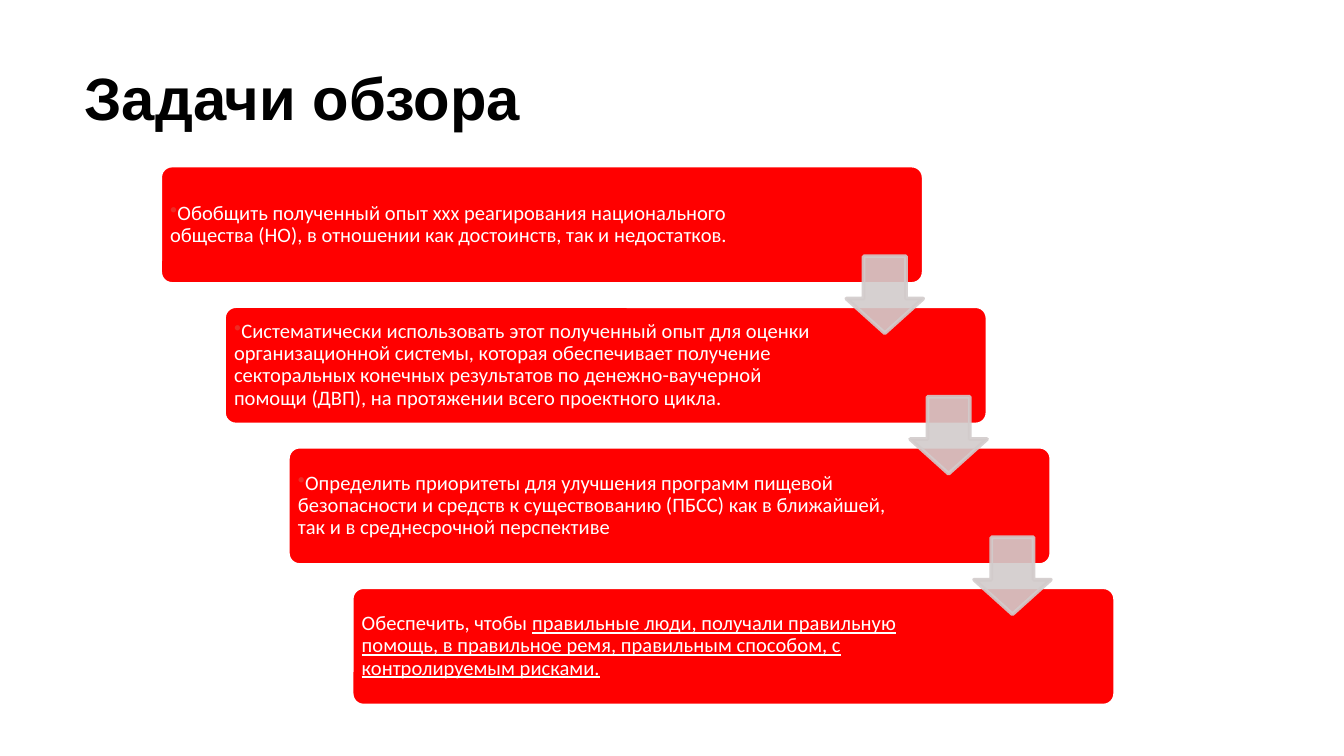
import pptx
import pptx.util
import pptx.dml.color
import pptx.enum.shapes
import pptx.enum.text
import pptx.oxml.ns
import lxml.etree

Pt = pptx.util.Pt
qn = pptx.oxml.ns.qn
SHAPE = pptx.enum.shapes.MSO_SHAPE
ANCHOR = pptx.enum.text.MSO_ANCHOR

COLORS = {
    "title": "000000",
    "box": "FF0000",
    "text": "FFFFFF",
    "bullet": "EE2A24",
    "arrow": "D2CBCB",
}

TASKS = [
    [("Обобщить полученный опыт xxx реагирования национального общества (НО), "
      "в отношении как достоинств, так и недостатков.", False)],
    [("Систематически использовать этот полученный опыт для оценки организационной "
      "системы, которая обеспечивает получение секторальных конечных результатов "
      "по денежно-ваучерной помощи (ДВП), на протяжении всего проектного цикла.", False)],
    [("Определить приоритеты для улучшения программ пищевой безопасности и средств "
      "к существованию (ПБСС) как в ближайшей, так и в среднесрочной перспективе", False)],
    [("Обеспечить, чтобы ", False),
     ("правильные люди, получали правильную помощь, в правильное ремя, "
      "правильным способом, с контролируемым рисками.", True)],
]


class Deck:
    def __init__(self, s):
        self.s = s

    def color(self, name):
        return pptx.dml.color.RGBColor.from_string(COLORS[name])

    def shape(self, kind, x, y, w, h, fill, line, adjustments, alpha=None):
        sp = self.s.shapes.add_shape(kind, Pt(x), Pt(y), Pt(w), Pt(h))
        sp.shadow.inherit = False
        for i, value in enumerate(adjustments):
            sp.adjustments[i] = value
        sp.fill.solid()
        sp.fill.fore_color.rgb = self.color(fill)
        sp.line.color.rgb = self.color(line)
        sp.line.width = Pt(2)
        if alpha is not None:
            for clr in sp._element.spPr.iter(qn("a:srgbClr")):
                lxml.etree.SubElement(clr, qn("a:alpha")).set("val", str(alpha * 1000))

    def box(self, x, y, w, h):
        self.shape(SHAPE.ROUNDED_RECTANGLE, x, y, w, h, "box", "text", [0.1])

    def arrow(self, x, y, size):
        self.shape(SHAPE.DOWN_ARROW, x, y, size, size, "arrow", "arrow", [0.55, 0.45], 90)

    def frame(self, x, y, w, h):
        tf = self.s.shapes.add_textbox(Pt(x), Pt(y), Pt(w), Pt(h)).text_frame
        tf.word_wrap = True
        return tf

    def run(self, p, text, font, size, color, bold=False, underline=False):
        r = p.add_run()
        r.text = text
        r.font.name = font
        r.font.size = Pt(size)
        r.font.bold = bold
        r.font.underline = underline
        r.font.color.rgb = self.color(color)

    def title(self, text, x, y, w, h):
        tf = self.frame(x, y, w, h)
        self.run(tf.paragraphs[0], text, "Arial", 32, "title", bold=True)

    def task(self, runs, x, y, w, h, bullet):
        tf = self.frame(x, y, w, h)
        tf.vertical_anchor = ANCHOR.MIDDLE
        tf.margin_left = tf.margin_right = tf.margin_top = tf.margin_bottom = Pt(3.6)
        p = tf.paragraphs[0]
        p.line_spacing = 0.9
        if bullet:
            self.bullet(p)
        for text, underline in runs:
            self.run(p, text, "Calibri", 11, "text", underline=underline)

    def bullet(self, p):
        pPr = p._p.get_or_add_pPr()
        pPr.set("marL", "0")
        pPr.set("indent", str(-Pt(5.76)))
        clr = lxml.etree.SubElement(pPr, qn("a:buClr"))
        lxml.etree.SubElement(clr, qn("a:srgbClr")).set("val", COLORS["bullet"])
        lxml.etree.SubElement(pPr, qn("a:buChar")).set("char", "•")


def main():
    prs = pptx.Presentation()
    prs.slide_width, prs.slide_height = Pt(720), Pt(405)
    deck = Deck(prs.slides.add_slide(prs.slide_layouts[6]))
    deck.title("Задачи обзора", 38.2, 28.8, 502, 46)

    step_x, step_y = 34.2, 75.3
    for i, runs in enumerate(TASKS):
        x, y = 85.8 + i * step_x, 88.7 + i * step_y
        deck.box(x, y, 409, 63.4)
        deck.task(runs, x + 1.8, y + 1.8, 330 if i else 335, 59.7, i < len(TASKS) - 1)
    for i in range(len(TASKS) - 1):
        deck.arrow(453.4 + i * step_x, 137.3 + i * step_y, 41.2)

    prs.save("out.pptx")


if __name__ == "__main__":
    main()
